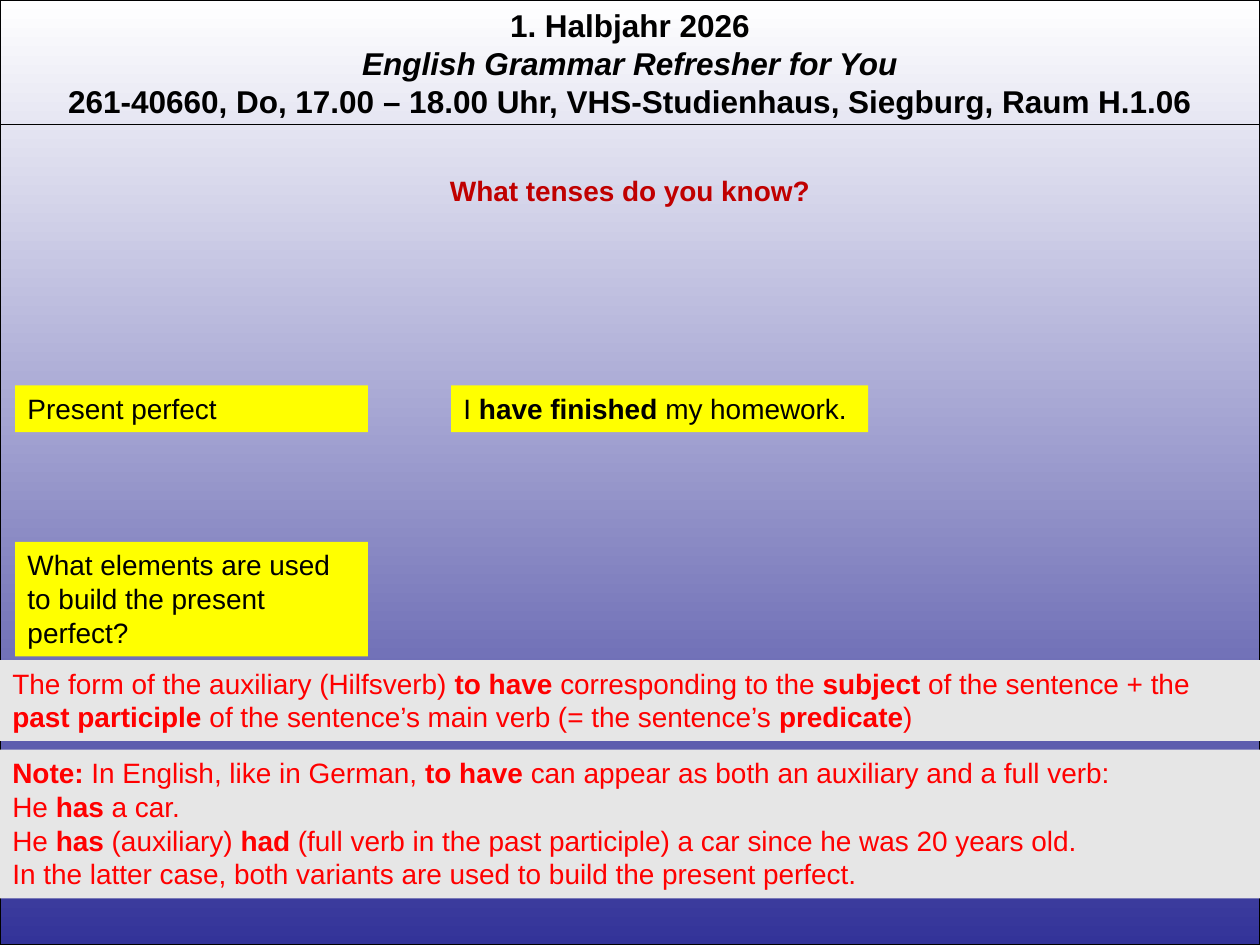
from dataclasses import dataclass
from typing import Optional

from lxml.etree import SubElement
from pptx import Presentation
from pptx.dml.color import RGBColor
from pptx.enum.shapes import MSO_CONNECTOR as Link, MSO_SHAPE as Form
from pptx.enum.text import MSO_ANCHOR as Anchor, MSO_AUTO_SIZE as Fit, PP_ALIGN as Align
from pptx.oxml.ns import qn
from pptx.util import Inches, Pt

BLACK = RGBColor(0x00, 0x00, 0x00)
WHITE = RGBColor(0xFF, 0xFF, 0xFF)
NAVY = RGBColor(0x33, 0x33, 0x99)
WINE = RGBColor(0xC0, 0x00, 0x00)
RED = RGBColor(0xFF, 0x00, 0x00)
YELLOW = RGBColor(0xFF, 0xFF, 0x00)
GREY = RGBColor(0xE6, 0xE6, 0xE6)

WIDTH, HEIGHT = 10, 7.5
LEFT, SIDE, ROW = 0.12, 2.8, 3.06
LINE = 0.37
WIDE = 10.04


@dataclass
class Box:
    """Text box whose lines mark bold with * and italic with _."""
    left: float
    top: float
    width: float
    height: float
    lines: list[str]
    fill: Optional[RGBColor] = None
    color: RGBColor = BLACK
    size: int = 16
    align: Align = Align.LEFT


BOXES = [
    Box(0, 0, WIDTH, 1.01, [
        "*1. Halbjahr 2026*",
        "*_English Grammar Refresher for You_*",
        "*261-40660, Do, 17.00 – 18.00 Uhr, VHS-Studienhaus, Siegburg, Raum H.1.06*",
    ], size=18, align=Align.CENTER),
    Box(0, 1.33, WIDTH, LINE, ["*What tenses do you know?*"],
        color=WINE, align=Align.CENTER),
    Box(LEFT, ROW, SIDE, LINE, ["Present perfect"], YELLOW),
    Box(3.58, ROW, 3.31, LINE, ["I *have finished *my homework."], YELLOW),
    Box(LEFT, 4.3, SIDE, 0.91,
        ["What elements are used to build the present perfect?"], YELLOW),
    Box(0, 5.24, WIDE, 0.64, [
        "The form of the auxiliary (Hilfsverb) *to have *corresponding to the "
        "*subject* of the sentence + the *past participle *of the sentence’s "
        "main verb (= the sentence’s *predicate*)",
    ], GREY, RED),
    Box(0, 5.95, WIDE, 1.18, [
        "*Note: *In English, like in German, *to have *can appear as both "
        "an auxiliary and a full verb:",
        "He *has* a car.",
        "He *has *(auxiliary) *had *(full verb in the past participle) "
        "a car since he was 20 years old.",
        "In the latter case, both variants are used to build the present perfect.",
    ], GREY, RED),
]


def add_ground(shapes) -> None:
    """Fill the slide with a downward gradient."""
    ground = shapes.add_shape(Form.RECTANGLE, 0, 0, Inches(WIDTH), Inches(HEIGHT))
    ground.shadow.inherit = False
    ground.fill.gradient()
    ground.fill.gradient_angle = 270
    for stop, color in zip(ground.fill.gradient_stops, (WHITE, NAVY)):
        stop.color.rgb = color
    ground.line.color.rgb = BLACK
    ground.line.width = Pt(0.75)


def add_rule(shapes, top: float) -> None:
    """Draw a line across the slide."""
    rule = shapes.add_connector(
        Link.STRAIGHT, 0, Inches(top), Inches(WIDTH), Inches(top))
    rule.line.color.rgb = BLACK
    rule.line.width = Pt(0.75)
    SubElement(rule._element.spPr, qn("a:effectLst"))


def add_line(para, text: str, box: Box) -> None:
    """Write one marked line as runs."""
    para.alignment = box.align
    for i, part in enumerate(text.split("*")):
        if part:
            run = para.add_run()
            run.text = part.strip("_")
            font = run.font
            font.name, font.size = "Arial", Pt(box.size)
            font.bold, font.italic = i % 2 == 1, part.startswith("_")
            font.color.rgb = box.color


def add_box(shapes, box: Box) -> None:
    """Draw a box with its text."""
    place = [Inches(n) for n in (box.left, box.top, box.width, box.height)]
    if box.fill is None:
        shape = shapes.add_textbox(*place)
    else:
        shape = shapes.add_shape(Form.RECTANGLE, *place)
        shape.shadow.inherit = False
        shape.fill.solid()
        shape.fill.fore_color.rgb = box.fill
        shape.line.fill.background()
    frame = shape.text_frame
    frame.word_wrap = True
    frame.auto_size = Fit.SHAPE_TO_FIT_TEXT
    frame.vertical_anchor = Anchor.TOP
    for i, text in enumerate(box.lines):
        para = frame.add_paragraph() if i else frame.paragraphs[0]
        add_line(para, text, box)


def main() -> None:
    """Build and save the slide."""
    deck = Presentation()
    deck.slide_width, deck.slide_height = Inches(WIDTH), Inches(HEIGHT)
    shapes = deck.slides.add_slide(deck.slide_layouts[6]).shapes
    add_ground(shapes)
    add_rule(shapes, 0.99)
    for box in BOXES:
        add_box(shapes, box)
    deck.save("out.pptx")


if __name__ == "__main__":
    main()
